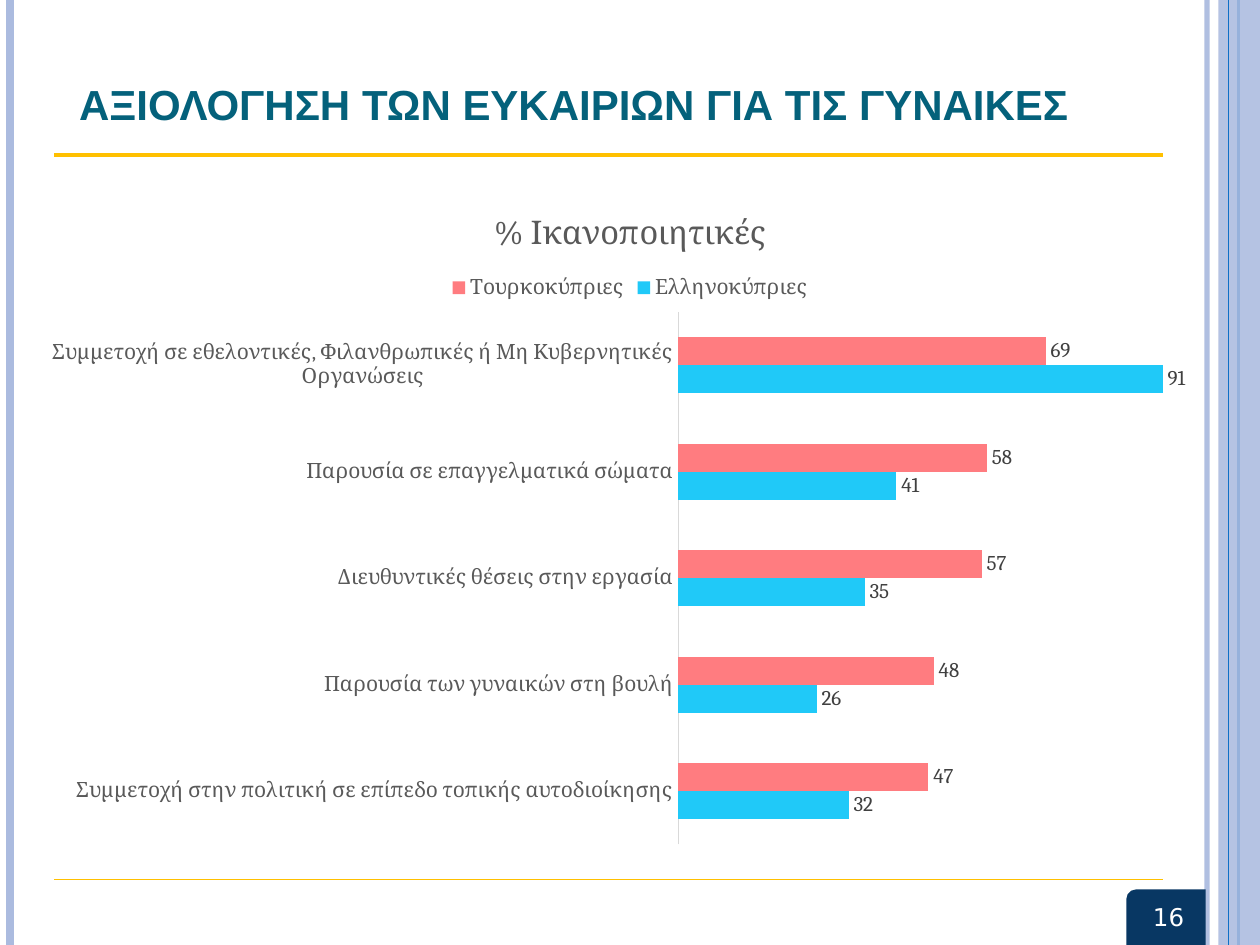
from typing import NamedTuple

from lxml.etree import SubElement
from pptx import Presentation
from pptx.chart.data import CategoryChartData
from pptx.dml.color import RGBColor
from pptx.enum.chart import XL_CHART_TYPE, XL_LABEL_POSITION, XL_LEGEND_POSITION, XL_TICK_MARK
from pptx.enum.shapes import MSO_CONNECTOR, MSO_SHAPE
from pptx.enum.text import MSO_ANCHOR, PP_ALIGN
from pptx.oxml import parse_xml
from pptx.oxml.ns import nsdecls, qn
from pptx.util import Inches, Pt

WIDTH, HEIGHT = 10, 7.5
COLORS = {
    "band": "ABBBDF", "stripe": "0F6FC6", "badge": "083763", "title": "04617B",
    "rule": "FFC000", "white": "FFFFFF", "axis": "D9D9D9", "muted": "595959",
    "label": "404040", "greek": "20C9F8", "turkish": "FF7C80",
}


class Rule(NamedTuple):
    start: tuple[float, float]
    end: tuple[float, float]
    color: str
    weight: float
    opacity: int = 100


class Series(NamedTuple):
    name: str
    values: tuple[int, ...]
    color: str


def vertical(x: float, color: str, weight: float, opacity: int = 100) -> Rule:
    return Rule((x, 0), (x, HEIGHT), color, weight, opacity)


def horizontal(y: float, weight: float) -> Rule:
    return Rule((0.43, y), (9.23, y), "rule", weight)


EDGE_RULES = [
    vertical(9.58, "band", 3, 93),
    vertical(0.08, "band", 4.5),
    vertical(9.83, "stripe", 1.5),
]
INNER_EDGE = vertical(9.75, "stripe", 0.75)
CONTENT_RULES = [horizontal(1.23, 2.25), horizontal(6.98, 1)]
CATEGORIES = [
    "Συμμετοχή στην πολιτική σε επίπεδο τοπικής αυτοδιοίκησης",
    "Παρουσία των γυναικών στη βουλή",
    "Διευθυντικές θέσεις στην εργασία",
    "Παρουσία σε επαγγελματικά σώματα",
    "Συμμετοχή σε εθελοντικές, Φιλανθρωπικές ή Μη Κυβερνητικές Οργανώσεις",
]
SERIES = [
    Series("Ελληνοκύπριες", (32, 26, 35, 41, 91), "greek"),
    Series("Τουρκοκύπριες", (47, 48, 57, 58, 69), "turkish"),
]


def rgb(name: str) -> RGBColor:
    return RGBColor.from_string(COLORS[name])


def set_font(font, name: str, size: float, color: str, bold: bool = False) -> None:
    font.name, font.size, font.bold = name, Pt(size), bold
    font.color.rgb = rgb(color)


def set_opacity(element, percent: int) -> None:
    color = next(element.iter(qn("a:srgbClr")))
    SubElement(color, qn("a:alpha"), val=str(percent * 1000))


def add_rule(page, rule: Rule) -> None:
    line = page.shapes.add_connector(
        MSO_CONNECTOR.STRAIGHT, *(Inches(value) for value in rule.start + rule.end))
    line.line.color.rgb = rgb(rule.color)
    line.line.width = Pt(rule.weight)
    properties = line._element.spPr
    if rule.opacity < 100:
        set_opacity(properties, rule.opacity)
    SubElement(properties, qn("a:effectLst"))


def add_block(page, kind, area: tuple[float, ...], color: str):
    block = page.shapes.add_shape(kind, *map(Inches, area))
    block.shadow.inherit = False
    block.fill.solid()
    block.fill.fore_color.rgb = rgb(color)
    block.line.fill.background()
    return block


def add_text(page, area: tuple[float, ...], text: str, anchor, align):
    box = page.shapes.add_textbox(*map(Inches, area))
    frame = box.text_frame
    frame.word_wrap = True
    frame.vertical_anchor = anchor
    frame.text = text
    frame.paragraphs[0].alignment = align
    return frame.paragraphs[0].runs[0].font


def add_bar_chart(page) -> None:
    data = CategoryChartData(number_format="0")
    data.categories = CATEGORIES
    for series in SERIES:
        data.add_series(series.name, series.values)
    chart = page.shapes.add_chart(
        XL_CHART_TYPE.BAR_CLUSTERED, *map(Inches, (0.2, 1.46, 9.6, 5.35)), data).chart
    set_font(chart.font, "Cambria", 12, "muted")

    # Title and legend
    title = chart.chart_title.text_frame
    title.text = "% Ικανοποιητικές"
    set_font(title.paragraphs[0].runs[0].font, "Cambria", 18.6, "muted")
    chart.has_legend = True
    chart.legend.position = XL_LEGEND_POSITION.TOP
    chart.legend.include_in_layout = False
    set_font(chart.legend.font, "Cambria", 12, "muted")

    # Axes
    category_axis, value_axis = chart.category_axis, chart.value_axis
    category_axis.major_tick_mark = XL_TICK_MARK.NONE
    category_axis.format.line.color.rgb = rgb("axis")
    category_axis.format.line.width = Pt(0.75)
    set_font(category_axis.tick_labels.font, "Cambria", 12, "muted")
    value_axis.minimum_scale, value_axis.maximum_scale = 0, 100
    value_axis.has_major_gridlines = False
    value_axis.visible = False

    # Bars and their values
    plot = chart.plots[0]
    plot.gap_width, plot.overlap = 182, 0
    plot.vary_by_categories = False
    for bars, series in zip(plot.series, SERIES):
        bars.format.fill.solid()
        bars.format.fill.fore_color.rgb = rgb(series.color)
        labels = bars.data_labels
        labels.show_value = True
        labels.position = XL_LABEL_POSITION.OUTSIDE_END
        labels.number_format, labels.number_format_is_linked = "0", False
        set_font(labels.font, "Cambria", 12, "label")

    # Inner plot area as shares of the chart
    shares = {"x": 0.54, "y": 0.19, "w": 0.44, "h": 0.79}
    modes = "".join(f'<c:{side}Mode val="edge"/>' for side in "xy")
    sizes = "".join(f'<c:{side} val="{share}"/>' for side, share in shares.items())
    area = chart._chartSpace.chart.plotArea
    for old in area.findall(qn("c:layout")):
        area.remove(old)
    area.insert(0, parse_xml(
        f'<c:layout {nsdecls("c")}><c:manualLayout><c:layoutTarget val="inner"/>'
        f"{modes}{sizes}</c:manualLayout></c:layout>"))


def main() -> None:
    deck = Presentation()
    deck.slide_width, deck.slide_height = Inches(WIDTH), Inches(HEIGHT)
    page = deck.slides.add_slide(deck.slide_layouts[6])

    # Side decoration
    for rule in EDGE_RULES:
        add_rule(page, rule)
    band = add_block(page, MSO_SHAPE.RECTANGLE, (9.67, 0, 0.33, HEIGHT), "band")
    set_opacity(band._element.spPr, 87)
    add_rule(page, INNER_EDGE)

    # Page number badge, rounded at its top left
    badge = add_block(page, MSO_SHAPE.ROUND_1_RECTANGLE, (8.94, 7.06, 0.63, 0.44), "badge")
    badge._element.spPr.xfrm.set("flipH", "1")

    # Title and page number
    title_font = add_text(page, (0.53, 0.49, 8.74, 0.58),
                          "ΑΞΙΟΛΟΓΗΣΗ ΤΩΝ ΕΥΚΑΙΡΙΩΝ ΓΙΑ ΤΙΣ ΓΥΝΑΙΚΕΣ",
                          MSO_ANCHOR.BOTTOM, PP_ALIGN.LEFT)
    set_font(title_font, "Arial", 24, "title", bold=True)
    number_font = add_text(page, (8.94, 6.94, 0.67, 0.67), "16",
                           MSO_ANCHOR.MIDDLE, PP_ALIGN.CENTER)
    set_font(number_font, "DejaVu Sans", 14, "white")

    # Content
    for rule in CONTENT_RULES:
        add_rule(page, rule)
    add_bar_chart(page)
    deck.save("out.pptx")


if __name__ == "__main__":
    main()
